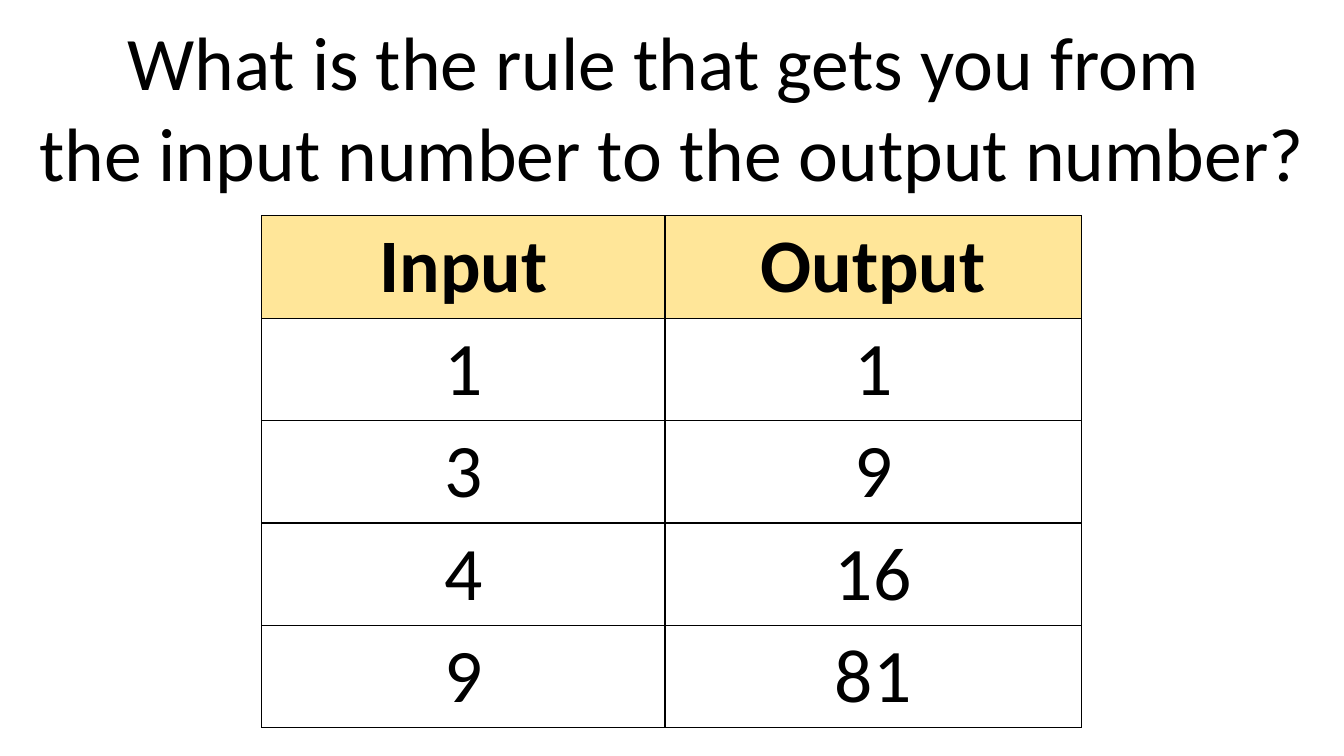
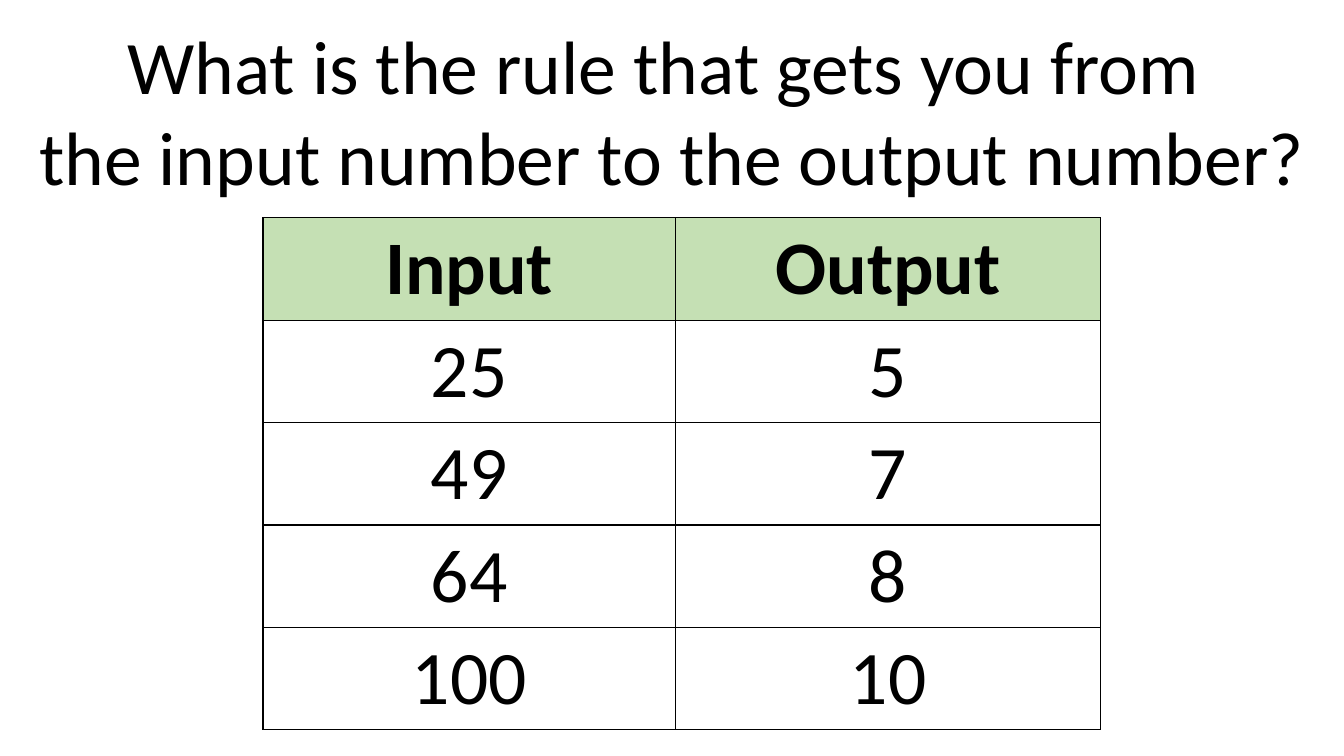
"""Build two slides that ask for the rule of an input and output table."""
import pptx
import pptx.chart.data
import pptx.dml.color
import pptx.enum.text
import pptx.oxml
import pptx.oxml.ns
import pptx.util
from lxml import etree

Cm = pptx.util.Cm
Pt = pptx.util.Pt
RGBColor = pptx.dml.color.RGBColor

BLACK = RGBColor(0x00, 0x00, 0x00)
GOLD = RGBColor(0xFF, 0xE6, 0x99)
GREEN = RGBColor(0xC5, 0xE0, 0xB4)

FONT = "Calibri"
SIZE = 54
WIDTH, HEIGHT = 33.87, 19.05
ROW = 2.58
TITLE = ["What is the rule that gets you from ",
         "the input number to the output number?"]
HEAD = ("Input", "Output")
SLIDES = [
    {"top": 0.25, "at": (6.6, 5.44), "cols": (10.16, 10.49), "fill": GOLD,
     "pairs": [(1, 1), (3, 9), (4, 16), (9, 81)]},
    {"top": 0.36, "at": (6.63, 5.49), "cols": (10.39, 10.72), "fill": GREEN,
     "pairs": [(25, 5), (49, 7), (64, 8), (100, 10)]},
]


def write(frame, lines, bold=False, size=SIZE, color=BLACK):
    for i, line in enumerate(lines):
        para = frame.paragraphs[0] if i == 0 else frame.add_paragraph()
        para.alignment = pptx.enum.text.PP_ALIGN.CENTER
        run = para.add_run()
        run.text = line
        run.font.name = FONT
        run.font.size = Pt(size)
        run.font.bold = bold
        run.font.color.rgb = color


def add_edges(cell):
    qn = pptx.oxml.ns.qn
    props = cell._tc.get_or_add_tcPr()
    for i, side in enumerate(("lnL", "lnR", "lnT", "lnB")):
        line = etree.Element(qn("a:" + side), w=str(Pt(1)))
        fill = etree.SubElement(line, qn("a:solidFill"))
        etree.SubElement(fill, qn("a:srgbClr"), val=str(BLACK))
        props.insert(i, line)


def add_title(slide, top):
    box = slide.shapes.add_textbox(Cm(0), Cm(top), Cm(WIDTH), Cm(4.88))
    box.text_frame.word_wrap = True
    write(box.text_frame, TITLE)


def add_grid(slide, at, cols, fill, pairs):
    rows = [HEAD, *pairs]
    left, top = at
    table = slide.shapes.add_table(
        len(rows), len(cols), Cm(left), Cm(top),
        Cm(sum(cols)), Cm(ROW * len(rows))).table
    table.first_row = table.horz_banding = False
    for col, width in zip(table.columns, cols):
        col.width = Cm(width)
    for r, values in enumerate(rows):
        table.rows[r].height = Cm(ROW)
        for c, value in enumerate(values):
            cell = table.cell(r, c)
            cell.vertical_anchor = pptx.enum.text.MSO_ANCHOR.MIDDLE
            write(cell.text_frame, [str(value)], bold=r == 0)
            if r == 0:
                cell.fill.solid()
                cell.fill.fore_color.rgb = fill
            else:
                cell.fill.background()
            add_edges(cell)


def main():
    deck = pptx.Presentation()
    deck.slide_width, deck.slide_height = Cm(WIDTH), Cm(HEIGHT)
    for item in SLIDES:
        slide = deck.slides.add_slide(deck.slide_layouts[6])
        add_grid(slide, item["at"], item["cols"], item["fill"], item["pairs"])
        add_title(slide, item["top"])
    deck.save("out.pptx")


if __name__ == "__main__":
    main()
